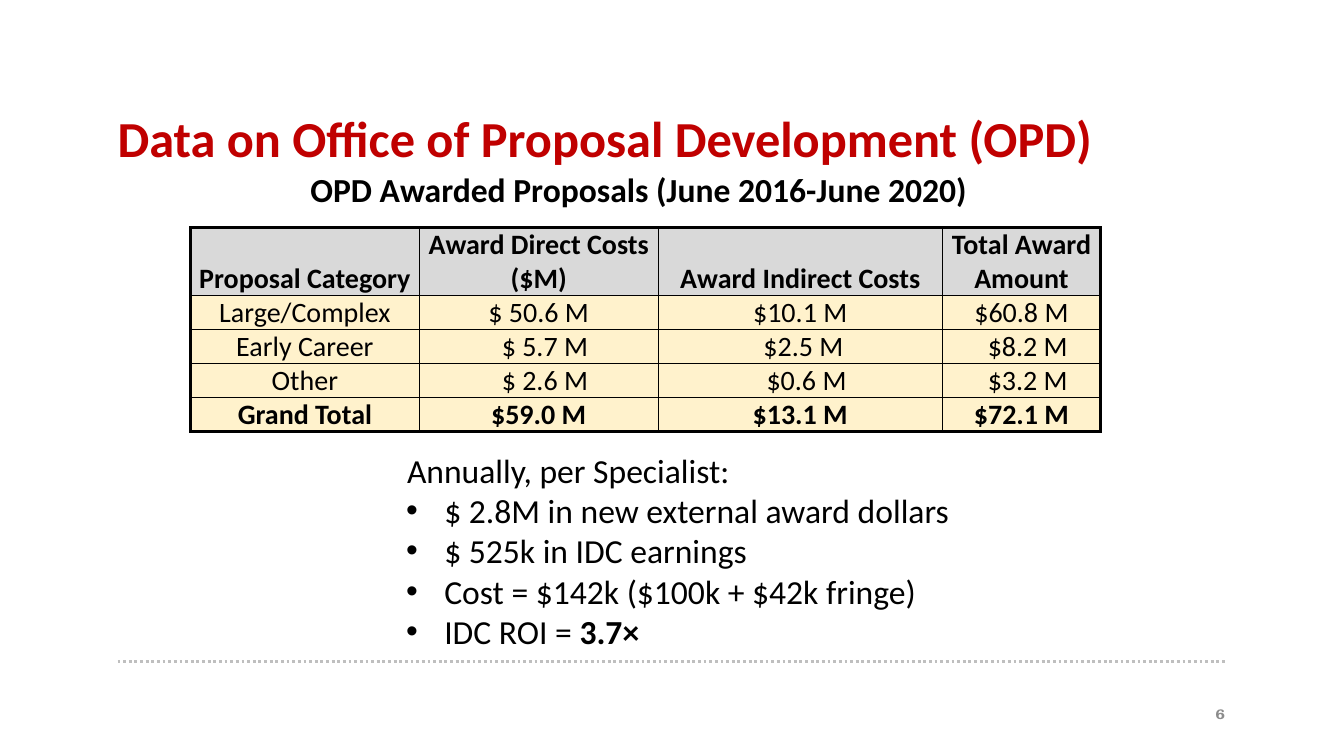
from lxml.etree import SubElement
from pptx import Presentation
from pptx.dml.color import RGBColor
from pptx.enum.dml import MSO_LINE
from pptx.enum.shapes import MSO_CONNECTOR
from pptx.enum.text import MSO_ANCHOR, PP_ALIGN
from pptx.oxml.ns import qn
from pptx.util import Inches, Pt

COLORS = {"red": "C00000", "black": "000000", "gray": "8C8C8C",
          "dots": "BFBFBF", "header": "D9D9D9", "body": "FFF2CC"}

prs = Presentation()
prs.slide_width, prs.slide_height = Inches(13.3333), Inches(7.5)
s = prs.slides.add_slide(prs.slide_layouts[6])
unit = prs.slide_width / 160


def add_run(p, text, color="black", **fmt):
    r = p.add_run()
    r.text = text
    for key, value in {"name": "Calibri", "size": Pt(24), "bold": False, **fmt}.items():
        setattr(r.font, key, value)
    r.font.color.rgb = RGBColor.from_string(COLORS[color])


def add_box(left, top, width, height, **fmt):
    sp = s.shapes.add_textbox(*[int(n * unit) for n in (left, top, width, height)])
    tf = sp.text_frame
    for key, value in {"word_wrap": True, **fmt}.items():
        setattr(tf, key, value)
    return tf


x1, x2, y = [int(n * unit) for n in (14, 146, 78.72)]
rule = s.shapes.add_connector(MSO_CONNECTOR.STRAIGHT, x1, y, x2, y)
rule.line.width = Pt(2)
rule.line.dash_style = MSO_LINE.ROUND_DOT
rule.line.color.rgb = RGBColor.from_string(COLORS["dots"])
SubElement(rule._element.spPr, qn("a:effectLst"))

tf = add_box(14, 14.76, 132, 13.92, margin_left=0, margin_top=0,
             margin_right=0, margin_bottom=0)
p = tf.paragraphs[0]
p.line_spacing = 0.7
add_run(p, "Data on Office of Proposal Development (OPD)", "red", size=Pt(36), bold=True)

tf = add_box(35.76, 19.56, 83.76, 6)
add_run(tf.paragraphs[0], "OPD Awarded Proposals (June 2016-June 2020)", bold=True)

rows = [
    ["Proposal Category", "Award Direct Costs ($M)", "Award Indirect Costs", "Total Award Amount"],
    ["Large/Complex", "$ 50.6 M", "$10.1 M", "$60.8 M"],
    ["Early Career", "$ 5.7 M", "$2.5 M", "$8.2 M"],
    ["Other", "$ 2.6 M", "$0.6 M", "$3.2 M"],
    ["Grand Total", "$59.0 M", "$13.1 M", "$72.1 M"],
]
col_widths = [27.24, 28.44, 33.84, 18.84]
row_heights = [8.08] + [4.04] * 4
last_row, last_col = len(rows) - 1, len(col_widths) - 1
frame = [int(n * unit) for n in (22.68, 27.12, sum(col_widths), sum(row_heights))]
tbl = s.shapes.add_table(len(rows), len(col_widths), *frame).table
for col, width in zip(tbl.columns, col_widths):
    col.width = int(width * unit)
for row, height in zip(tbl.rows, row_heights):
    row.height = int(height * unit)

for i, row in enumerate(rows):
    for j, text in enumerate(row):
        cell = tbl.cell(i, j)
        indented = i in (2, 3) and j > 0
        margins = {"margin_left": Pt(9) if indented else 0,
                   "margin_right": Pt(4.5) if (i, j) == (2, 2) else 0,
                   "margin_top": 0, "margin_bottom": 0}
        for key, value in {**margins, "vertical_anchor": MSO_ANCHOR.BOTTOM}.items():
            setattr(cell, key, value)
        p = cell.text_frame.paragraphs[0]
        p.alignment = PP_ALIGN.CENTER
        add_run(p, text, size=Pt(20), bold=i in (0, last_row))
        outer = {"L": j == 0, "R": j == last_col, "T": i == 0, "B": i == last_row}
        for side, thick in outer.items():
            ln = SubElement(cell._tc.get_or_add_tcPr(), qn(f"a:ln{side}"),
                            w=str(Pt(2.25 if thick else 0.5)))
            fill = SubElement(ln, qn("a:solidFill"))
            SubElement(fill, qn("a:srgbClr"), val=COLORS["black"])
        cell.fill.solid()
        cell.fill.fore_color.rgb = RGBColor.from_string(COLORS["body" if i else "header"])

tf = add_box(46.92, 52.92, 72.48, 25.44)
p = tf.paragraphs[0]
p._p.get_or_add_pPr().set("marL", str(int(0.36 * unit)))
add_run(p, "Annually, per Specialist:")
facts = [("$ 2.8M in new external award dollars", ""), ("$ 525k in IDC earnings", ""),
         ("Cost = $142k ($100k + $42k fringe)", ""), ("IDC ROI = ", "3.7×")]
for text, strong in facts:
    p = tf.add_paragraph()
    pPr = p._p.get_or_add_pPr()
    pPr.set("marL", str(int(4.8 * unit)))
    pPr.set("indent", str(int(-4.56 * unit)))
    SubElement(pPr, qn("a:buFont"), typeface="Arial")
    SubElement(pPr, qn("a:buChar"), char="•")
    add_run(p, text)
    if strong:
        add_run(p, strong, bold=True)

tf = add_box(111, 82.56, 36, 4.8, vertical_anchor=MSO_ANCHOR.MIDDLE)
p = tf.paragraphs[0]
p.alignment = PP_ALIGN.RIGHT
add_run(p, "6", "gray", name="TeX Gyre Bonum", size=Pt(10), bold=True)

prs.save("out.pptx")
